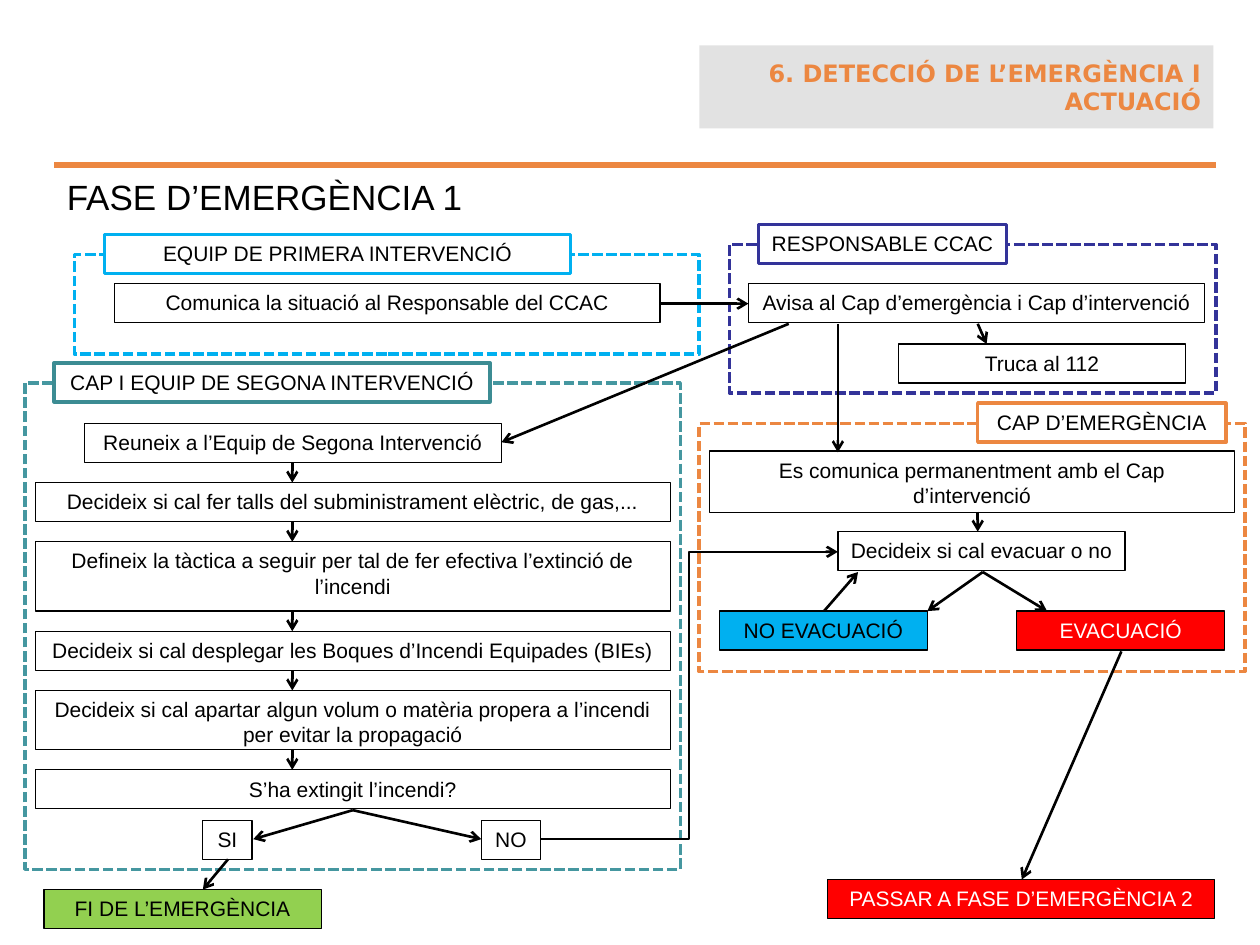
import pptx
import pptx.util
import pptx.dml.color
import pptx.enum.dml
import pptx.enum.shapes
import pptx.enum.text
import pptx.oxml
import pptx.oxml.ns
from pptx.util import Inches

COLORS = {
    "black": "000000", "white": "FFFFFF", "grey": "E2E2E2", "orange": "EC8741",
    "sky": "00B0F0", "indigo": "333399", "teal": "4597A0", "dark teal": "3C8C93",
    "green": "92D050", "red": "FF0000",
}
ALIGN = pptx.enum.text.PP_ALIGN
ANCHOR = pptx.enum.text.MSO_ANCHOR
CONNECTOR = pptx.enum.shapes.MSO_CONNECTOR
ROW = 0.31  # height of a one-line box


def rgb(name):
    return pptx.dml.color.RGBColor.from_string(COLORS[name])


class FlowSlide:
    """The slide and the style of its flow chart."""

    def __init__(self, slide, font="Arial", size=12):
        self.slide = slide
        self.font = font
        self.size = size

    def set_text(self, shape, text, color="black", size=None, font=None,
                 bold=False, align=ALIGN.CENTER, anchor=ANCHOR.TOP):
        frame = shape.text_frame
        frame.text = text
        frame.word_wrap = True
        frame.auto_size = pptx.enum.text.MSO_AUTO_SIZE.NONE
        frame.vertical_anchor = anchor
        paragraph = frame.paragraphs[0]
        paragraph.alignment = align
        for run in paragraph.runs:
            run.font.name = font or self.font
            run.font.size = pptx.util.Pt(size or self.size)
            run.font.bold = bold
            run.font.color.rgb = rgb(color)

    def title(self, text, left, top, width, height):
        title = self.slide.shapes.title
        title.left, title.top = Inches(left), Inches(top)
        title.width, title.height = Inches(width), Inches(height)
        self.set_text(title, text, size=20, align=ALIGN.JUSTIFY)

    def rect(self, left, top, width, height, fill=None, line=None, weight=0.75):
        shape = self.slide.shapes.add_shape(
            pptx.enum.shapes.MSO_SHAPE.RECTANGLE,
            Inches(left), Inches(top), Inches(width), Inches(height))
        shape.shadow.inherit = False
        if fill:
            shape.fill.solid()
            shape.fill.fore_color.rgb = rgb(fill)
        else:
            shape.fill.background()
        if line:
            shape.line.color.rgb = rgb(line)
            shape.line.width = pptx.util.Pt(weight)
        else:
            shape.line.fill.background()
        return shape

    def step(self, text, left, top, width, height=ROW, fill="white", color="black"):
        self.set_text(self.rect(left, top, width, height, fill, "black"), text, color)

    def role(self, text, frame, heading, color, heading_color=None):
        """Dashed frame of one role, with its heading (left, top, width)."""
        outline = self.rect(*frame, line=color, weight=2)
        outline.line.dash_style = pptx.enum.dml.MSO_LINE.SQUARE_DOT
        label = self.rect(*heading, ROW, "white", heading_color or color, 2)
        self.set_text(label, text)

    def line(self, start, end, kind=CONNECTOR.STRAIGHT, color="black", weight=1.5):
        connector = self.slide.shapes.add_connector(
            kind, *(Inches(value) for value in (*start, *end)))
        connector.line.color.rgb = rgb(color)
        connector.line.width = pptx.util.Pt(weight)
        properties = connector._element.spPr
        properties.append(pptx.oxml.parse_xml(
            f"<a:effectLst {pptx.oxml.ns.nsdecls('a')}/>"))
        return connector

    def arrow(self, start, end, kind=CONNECTOR.STRAIGHT):
        connector = self.line(start, end, kind)
        outline = connector._element.spPr.find(pptx.oxml.ns.qn("a:ln"))
        outline.append(pptx.oxml.parse_xml(
            f"<a:tailEnd {pptx.oxml.ns.nsdecls('a')} type='arrow'/>"))


def add_header(flow):
    flow.line((0.43, 1.31), (9.65, 1.31), color="orange", weight=3)
    chapter = flow.rect(5.55, 0.36, 4.08, 0.66, "grey")
    flow.set_text(chapter, "6. DETECCIÓ DE L’EMERGÈNCIA I ACTUACIÓ", "orange", 13.7,
                  "DejaVu Sans", True, ALIGN.RIGHT, ANCHOR.MIDDLE)
    flow.title("FASE D’EMERGÈNCIA 1", 0.43, 1.34, 9.21, 0.44)


def add_roles(flow):
    flow.role("EQUIP DE PRIMERA INTERVENCIÓ", (0.59, 2.02, 4.96, 0.79),
              (0.83, 1.86, 3.7), "sky")
    flow.role("RESPONSABLE CCAC", (5.79, 1.94, 3.86, 1.18),
              (6.02, 1.78, 1.97), "indigo")
    flow.role("CAP I EQUIP DE SEGONA INTERVENCIÓ", (0.2, 3.04, 5.2, 3.86),
              (0.43, 2.88, 3.46), "teal", "dark teal")
    flow.role("CAP D’EMERGÈNCIA", (5.55, 3.36, 4.33, 1.97),
              (7.76, 3.2, 1.97), "orange")


def add_second_team_steps(flow):
    """Stack the steps of the second team, with an arrow across each gap."""
    gap, arrow_x = 0.16, 2.32
    left, width = 0.28, 5.04
    flow.step("Reuneix a l’Equip de Segona Intervenció", 0.67, 3.36, 3.31)
    bottom = 3.36 + ROW
    for text, height in (
        ("Decideix si cal fer talls del subministrament elèctric, de gas,...", ROW),
        ("Defineix la tàctica a seguir per tal de fer efectiva l’extinció de l’incendi",
         0.55),
        ("Decideix si cal desplegar les Boques d’Incendi Equipades (BIEs)", ROW),
        ("Decideix si cal apartar algun volum o matèria propera a l’incendi "
         "per evitar la propagació", 0.47),
        ("S’ha extingit l’incendi?", ROW),
    ):
        top = bottom + gap
        flow.step(text, left, top, width, height)
        flow.arrow((arrow_x, bottom), (arrow_x, top))
        bottom = top + height


def add_other_steps(flow):
    flow.step("Comunica la situació al Responsable del CCAC", 0.91, 2.25, 4.33)
    flow.step("Avisa al Cap d’emergència i Cap d’intervenció", 5.94, 2.25, 3.62)
    flow.step("Truca al 112", 7.13, 2.73, 2.28)
    flow.step("Es comunica permanentment amb el Cap d’intervenció",
              5.63, 3.58, 4.17, 0.49)
    flow.step("Decideix si cal evacuar o no", 6.65, 4.22, 2.28)
    flow.step("NO EVACUACIÓ", 5.71, 4.85, 1.65, fill="sky")
    flow.step("EVACUACIÓ", 8.07, 4.85, 1.65, fill="red", color="white")
    flow.step("SI", 1.61, 6.51, 0.39)
    flow.step("NO", 3.82, 6.51, 0.47)
    flow.step("FI DE L’EMERGÈNCIA", 0.35, 7.06, 2.2, fill="green")
    flow.step("PASSAR A FASE D’EMERGÈNCIA 2", 6.57, 6.98, 3.07,
              fill="red", color="white")


def add_arrows(flow):
    extinguished, evacuate = (2.8, 6.43), (7.8, 4.54)
    for start, end in (
        ((5.24, 2.41), (5.94, 2.41)),
        ((7.76, 2.57), (7.83, 2.73)),
        ((6.26, 2.57), (3.98, 3.51)),
        ((6.65, 2.57), (6.65, 3.59)),
        ((7.76, 4.06), (7.76, 4.22)),
        (extinguished, (2.01, 6.66)),
        (extinguished, (3.82, 6.66)),
        (evacuate, (7.36, 4.85)),
        (evacuate, (8.31, 4.85)),
        ((6.54, 4.85), (6.81, 4.54)),
        ((8.9, 5.17), (8.11, 6.98)),
        ((1.81, 6.82), (1.61, 7.06)),
    ):
        flow.arrow(start, end)
    flow.arrow((4.29, 6.66), (6.65, 4.38), CONNECTOR.ELBOW)


def main():
    presentation = pptx.Presentation()
    presentation.slide_width, presentation.slide_height = Inches(10), Inches(7.5)
    title_only = presentation.slide_layouts[5]
    flow = FlowSlide(presentation.slides.add_slide(title_only))
    add_header(flow)
    add_roles(flow)
    add_second_team_steps(flow)
    add_other_steps(flow)
    add_arrows(flow)
    presentation.save("out.pptx")


if __name__ == "__main__":
    main()
